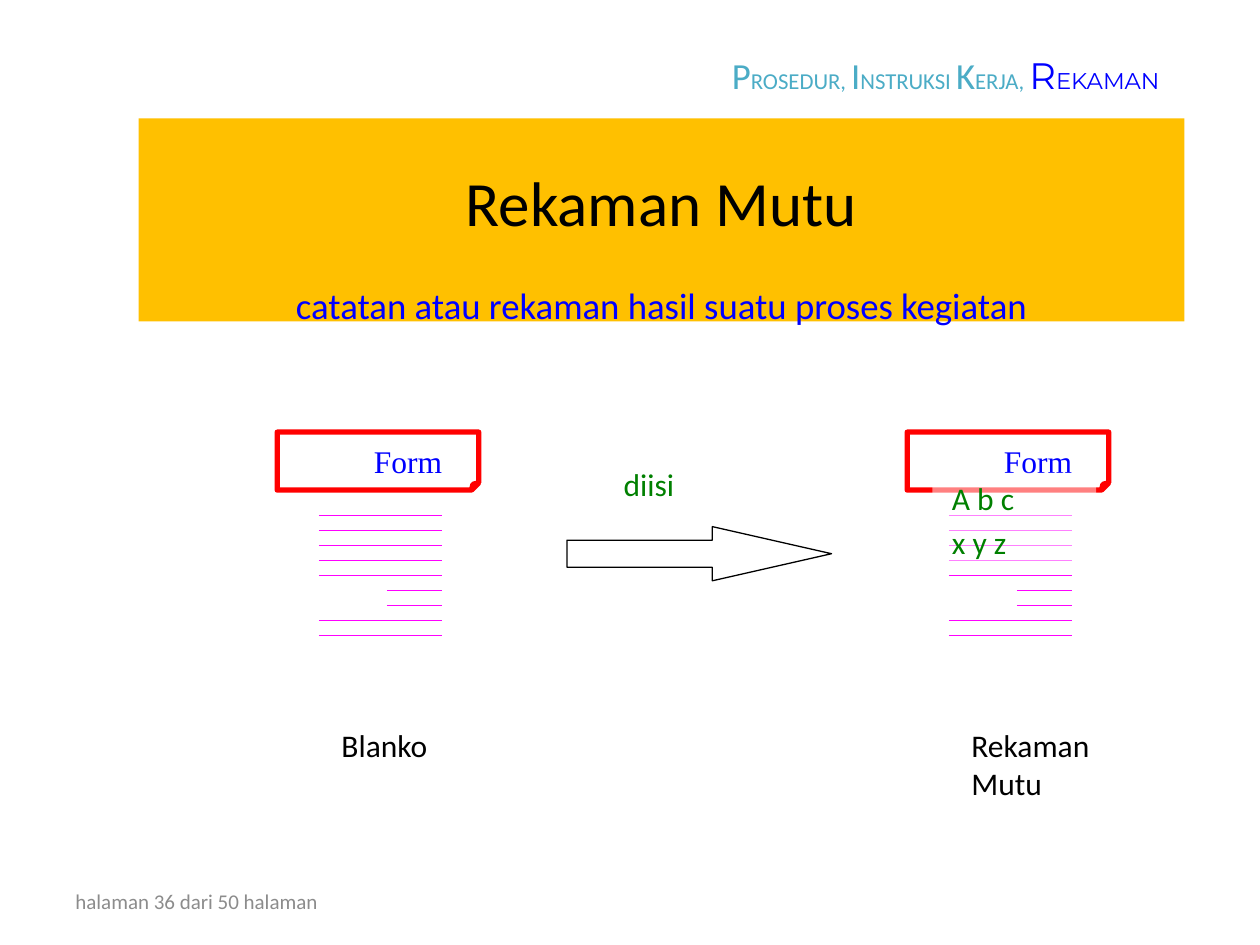
from dataclasses import dataclass

from lxml.etree import SubElement
from pptx import Presentation
from pptx.dml.color import RGBColor
from pptx.enum.shapes import MSO_CONNECTOR, MSO_SHAPE
from pptx.enum.text import MSO_ANCHOR, PP_ALIGN
from pptx.oxml.ns import qn
from pptx.util import Emu, Inches, Pt

COLORS = {
    "banner": "FFC000", "black": "000000", "blue": "0000FF", "green": "008000",
    "grey": "8C8C8C", "teal": "4BACC6", "red": "FF0000", "magenta": "FF00FF",
    "white": "FFFFFF",
}
# Square grid cells, a tenth of an inch each
COLUMNS, ROWS = 100, 75
CELL = Inches(10) // COLUMNS
INSETS = (1, 0.5, 1, 0.5)
LABEL_INSETS = (0.4, 0.4, 0.4, 0.4)


@dataclass(frozen=True)
class Area:
    """Columns and rows of the grid."""
    col: float
    row: float
    cols: float
    rows: float

    def box(self) -> tuple[Emu, Emu, Emu, Emu]:
        return tuple(cells(n) for n in (self.col, self.row, self.cols, self.rows))


@dataclass(frozen=True)
class Piece:
    text: str
    size: float
    color: str
    font: str = "Calibri"


@dataclass(frozen=True)
class Line:
    pieces: tuple[Piece, ...]
    align: PP_ALIGN = PP_ALIGN.LEFT
    before: float = 0


@dataclass(frozen=True)
class Rules:
    first: int
    count: int
    start: float


def cells(n: float) -> Emu:
    return Emu(round(n * CELL))


def color(name: str) -> RGBColor:
    return RGBColor.from_string(COLORS[name])


def write(shape, lines: list[Line], insets=INSETS, anchor=MSO_ANCHOR.TOP) -> None:
    frame = shape.text_frame
    frame.word_wrap = True
    frame.vertical_anchor = anchor
    (frame.margin_left, frame.margin_top,
     frame.margin_right, frame.margin_bottom) = map(cells, insets)
    for index, line in enumerate(lines):
        paragraph = frame.add_paragraph() if index else frame.paragraphs[0]
        paragraph.alignment = line.align
        if line.before:
            paragraph.space_before = Pt(line.before)
        for piece in line.pieces:
            run = paragraph.add_run()
            run.text = piece.text
            run.font.size = Pt(piece.size)
            run.font.name = piece.font
            run.font.color.rgb = color(piece.color)


def add_text(shapes, area: Area, lines: list[Line], **layout) -> None:
    write(shapes.add_textbox(*area.box()), lines, **layout)


def add_box(shapes, kind: MSO_SHAPE, area: Area, fill: str = "",
            line: str = "", width: float = 0):
    shape = shapes.add_shape(kind, *area.box())
    shape.shadow.inherit = False
    if fill:
        shape.fill.solid()
        shape.fill.fore_color.rgb = color(fill)
    else:
        shape.fill.background()
    if line:
        shape.line.color.rgb = color(line)
        shape.line.width = Pt(width)
    else:
        shape.line.fill.background()
    return shape


def add_rule(shapes, start: float, end: float, row: float) -> None:
    rule = shapes.add_connector(MSO_CONNECTOR.STRAIGHT, cells(start), cells(row),
                                cells(end), cells(row))
    rule.line.color.rgb = color("magenta")
    rule.line.width = Pt(0.25)
    SubElement(rule._element.spPr, qn("a:effectLst"))


RULE_BANDS = (Rules(0, 5, 3.3), Rules(5, 2, 8.7), Rules(7, 2, 3.3))
RULE_TOP, RULE_STEP, RULE_END = 40.9, 1.19, 13.1


def add_form(slide, col: float) -> None:
    shapes = slide.shapes.add_group_shape().shapes
    header = add_box(shapes, MSO_SHAPE.FOLDED_CORNER, Area(col, 34.3, 16, 4.6),
                     line="red", width=3)
    # The fold size is not offered by the adjustments of this preset
    fold = next(header._element.spPr.iter(qn("a:avLst")))
    SubElement(fold, qn("a:gd"), name="adj", fmla="val 12500")
    for band in RULE_BANDS:
        for index in range(band.first, band.first + band.count):
            add_rule(shapes, col + band.start, col + RULE_END,
                     RULE_TOP + index * RULE_STEP)
    add_text(shapes, Area(col + 6.7, 34.6, 8, 4),
             [Line((Piece("Form", 18, "blue", "Times New Roman"),))])


def main() -> None:
    deck = Presentation()
    deck.slide_width, deck.slide_height = cells(COLUMNS), cells(ROWS)
    slide = deck.slides.add_slide(deck.slide_layouts[6])
    shapes = slide.shapes

    # Page count
    add_text(shapes, Area(5, 69.5, 23.3, 4),
             [Line((Piece("halaman 36 dari 50 halaman", 12, "grey"),))],
             anchor=MSO_ANCHOR.MIDDLE)

    # Title banner
    banner = add_box(shapes, MSO_SHAPE.RECTANGLE, Area(11, 9.4, 83, 16.1), "banner")
    write(banner, [
        Line((Piece("Rekaman Mutu", 36, "black"),), PP_ALIGN.CENTER),
        Line((Piece("catatan atau rekaman hasil suatu proses kegiatan", 21, "blue"),),
             PP_ALIGN.CENTER, before=25),
    ], insets=(1, 3.6, 1, 0))

    # Section heading in small capitals
    heading = [Piece(text, size, "teal") for initial, rest in
               (("P", "ROSEDUR, "), ("I", "NSTRUKSI "), ("K", "ERJA, "))
               for text, size in ((initial, 21), (rest, 13))]
    heading += [Piece("R", 21, "blue", "Montserrat"),
                Piece("EKAMAN", 13, "blue", "Montserrat")]
    add_text(shapes, Area(11, 3.2, 82, 5.4), [Line(tuple(heading), PP_ALIGN.RIGHT)],
             anchor=MSO_ANCHOR.MIDDLE)

    # Blank form and filled form
    for form_col, caption, caption_rows in ((22, "Blanko", 3.8),
                                            (72, "Rekaman Mutu", 6.9)):
        add_form(slide, form_col)
        add_text(shapes, Area(form_col + 4.7, 57.2, 14.5, caption_rows),
                 [Line((Piece(caption, 18, "black"),))], insets=LABEL_INSETS)

    # Entries over the filled form
    entries = add_box(shapes, MSO_SHAPE.RECTANGLE, Area(74, 37.5, 13, 7.5), "white")
    tint = next(entries._element.spPr.iter(qn("a:srgbClr")))
    SubElement(tint, qn("a:alpha"), val="50000")
    write(entries, [Line((Piece(" A b c", 18, "green"),)),
                    Line((Piece(" x y z", 18, "green"),), before=3.6)])

    # Filling-in step
    add_text(shapes, Area(46, 36.4, 11, 5.4),
             [Line((Piece("diisi", 18, "green"),), PP_ALIGN.CENTER)])
    arrow = add_box(shapes, MSO_SHAPE.RIGHT_ARROW, Area(45, 41.8, 21, 4.3),
                    line="black", width=0.75)
    arrow.adjustments[0], arrow.adjustments[1] = 0.5, 2.2

    deck.save("out.pptx")


if __name__ == "__main__":
    main()
